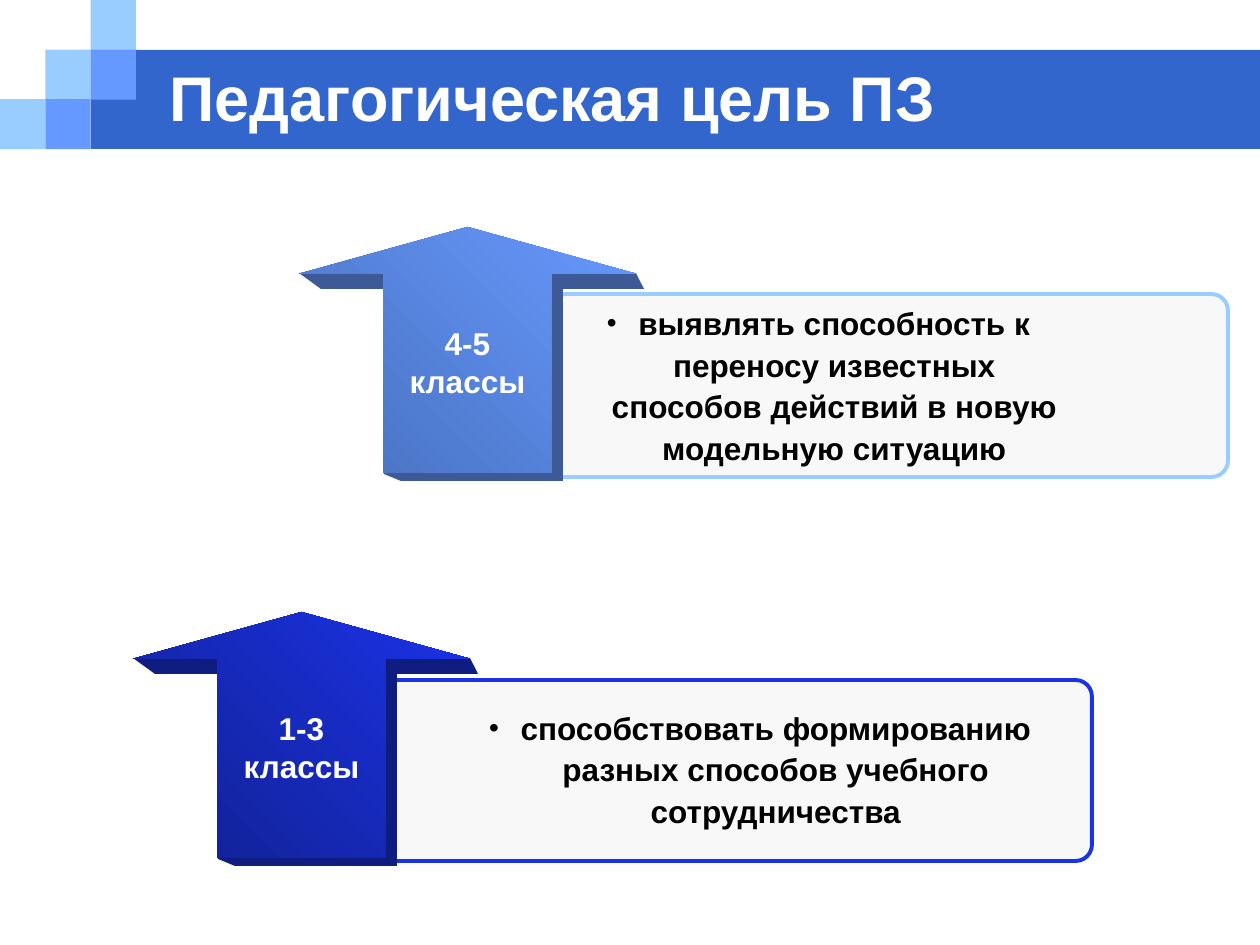
from lxml import etree
from pptx import Presentation
from pptx import util as u
from pptx.dml.color import RGBColor
from pptx.enum import shapes, text
from pptx.oxml.ns import qn

PX = 914400 / 126  # EMU in one px
COLORS = {
    "white": "FFFFFF", "black": "000000", "band": "3366CC",
    "sky": "99CCFF", "blue": "6699FF", "panel": "F8F8F8",
}


def add_shape(kind, box, fill=None, line=None):
    sp = slide.shapes.add_shape(kind, *[u.Emu(round(v * PX)) for v in box])
    sp.shadow.inherit = False
    if fill:
        sp.fill.solid()
        sp.fill.fore_color.rgb = RGBColor.from_string(fill)
    if line:
        sp.line.color.rgb = RGBColor.from_string(line)
        sp.line.width = u.Pt(2.25)
    else:
        sp.line.fill.background()
    return sp


def write(sp, lines, size=18, color="black", align=text.PP_ALIGN.CENTER,
          anchor=text.MSO_ANCHOR.MIDDLE, wrap=True, spacing=None, bullet=False):
    tf = sp.text_frame
    tf.word_wrap = wrap
    tf.auto_size = text.MSO_AUTO_SIZE.NONE
    tf.vertical_anchor = anchor
    for i, line in enumerate(lines):
        p = tf.paragraphs[0] if i == 0 else tf.add_paragraph()
        p.alignment = align
        p.space_before = u.Pt(0)
        if spacing:
            p.line_spacing = spacing
        if bullet:
            pPr = p._p.get_or_add_pPr()
            pPr.set("marL", "228600")
            pPr.set("indent", "-228600")
            etree.SubElement(pPr, qn("a:buSzPct")).set("val", "89000")
            etree.SubElement(pPr, qn("a:buFont")).set("typeface", "Arial")
            etree.SubElement(pPr, qn("a:buChar")).set("char", "•")
        r = p.add_run()
        r.text = line
        r.font.name = "Arial"
        r.font.size = u.Pt(size)
        r.font.bold = True
        r.font.color.rgb = RGBColor.from_string(COLORS[color])


prs = Presentation()
prs.slide_width, prs.slide_height = u.Inches(10), u.Inches(7.5)
slide = prs.slides.add_slide(prs.slide_layouts[5])

# Header band with its staircase of squares
RECT = shapes.MSO_SHAPE.RECTANGLE
add_shape(RECT, (91, 50, 1169, 99), COLORS["band"])
for col, row, color in [(0, 2, "sky"), (1, 1, "sky"), (2, 0, "sky"),
                        (2, 1, "blue"), (1, 2, "blue")]:
    add_shape(RECT, (col * 45.3, row * 49.6, 45.3, 50), COLORS[color])

title = slide.shapes.title
title.left, title.top, title.width, title.height = [
    u.Emu(round(v * PX)) for v in (157, 63, 1018, 67)]
write(title, ["Педагогическая цель ПЗ"], size=36, color="white",
      align=text.PP_ALIGN.LEFT)
slide.shapes._spTree.append(title._element)  # in front of the band

# Each goal: panel, extruded arrow with the grades, bulleted text
GOALS = [
    dict(panel=(541, 294, 687, 183), line="99CCFF", arrow=(299, 227),
         grad=("4870BC", "6699FF"), side="3D5A96", grades="4-5",
         box=(560, 294, 517, 179),
         goal="выявлять способность к переносу известных способов действий "
              "в новую модельную ситуацию"),
    dict(panel=(311, 680, 781, 181), line="1B33E7", arrow=(133, 612),
         grad=("11208F", "1B33E7"), side="0F1C80", grades="1-3",
         box=(454, 699, 612, 137),
         goal="способствовать формированию разных способов учебного "
              "сотрудничества"),
]
SIDE = [(0, 46), (22, 62), (85, 62), (85, 247), (102, 254), (264, 254),
        (264, 62), (345, 62), (337, 46)]

for g in GOALS:
    panel = add_shape(shapes.MSO_SHAPE.ROUNDED_RECTANGLE, g["panel"],
                      COLORS["panel"], g["line"])
    panel.adjustments[0] = 0.09

    x, y = g["arrow"]
    points = [(x + dx, y + dy) for dx, dy in SIDE]
    fb = slide.shapes.build_freeform(*points[0], scale=PX)
    fb.add_line_segments(points[1:], close=True)
    side = fb.convert_to_shape()
    side.shadow.inherit = False
    side.fill.solid()
    side.fill.fore_color.rgb = RGBColor.from_string(g["side"])
    side.line.fill.background()

    arrow = add_shape(shapes.MSO_SHAPE.UP_ARROW, (x, y, 337, 246))
    arrow.adjustments[0], arrow.adjustments[1] = 0.5, 0.19
    arrow.fill.gradient()
    arrow.fill.gradient_angle = 45
    for stop, color in zip(arrow.fill.gradient_stops, g["grad"]):
        stop.color.rgb = RGBColor.from_string(color)
    write(arrow, [g["grades"], "классы"], color="white", wrap=False)

for g in GOALS:
    tb = slide.shapes.add_textbox(*[u.Emu(round(v * PX)) for v in g["box"]])
    write(tb, [g["goal"]], anchor=text.MSO_ANCHOR.TOP, spacing=1.1, bullet=True)

prs.save("out.pptx")
